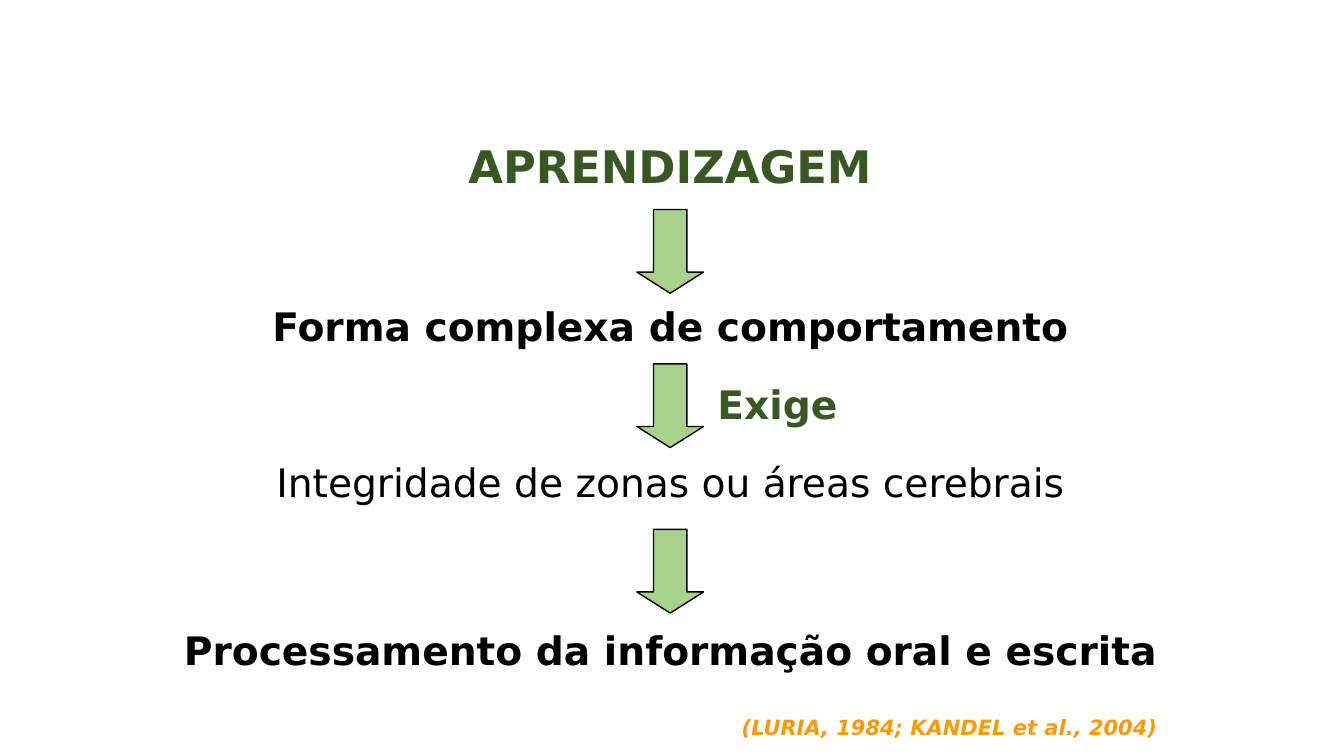
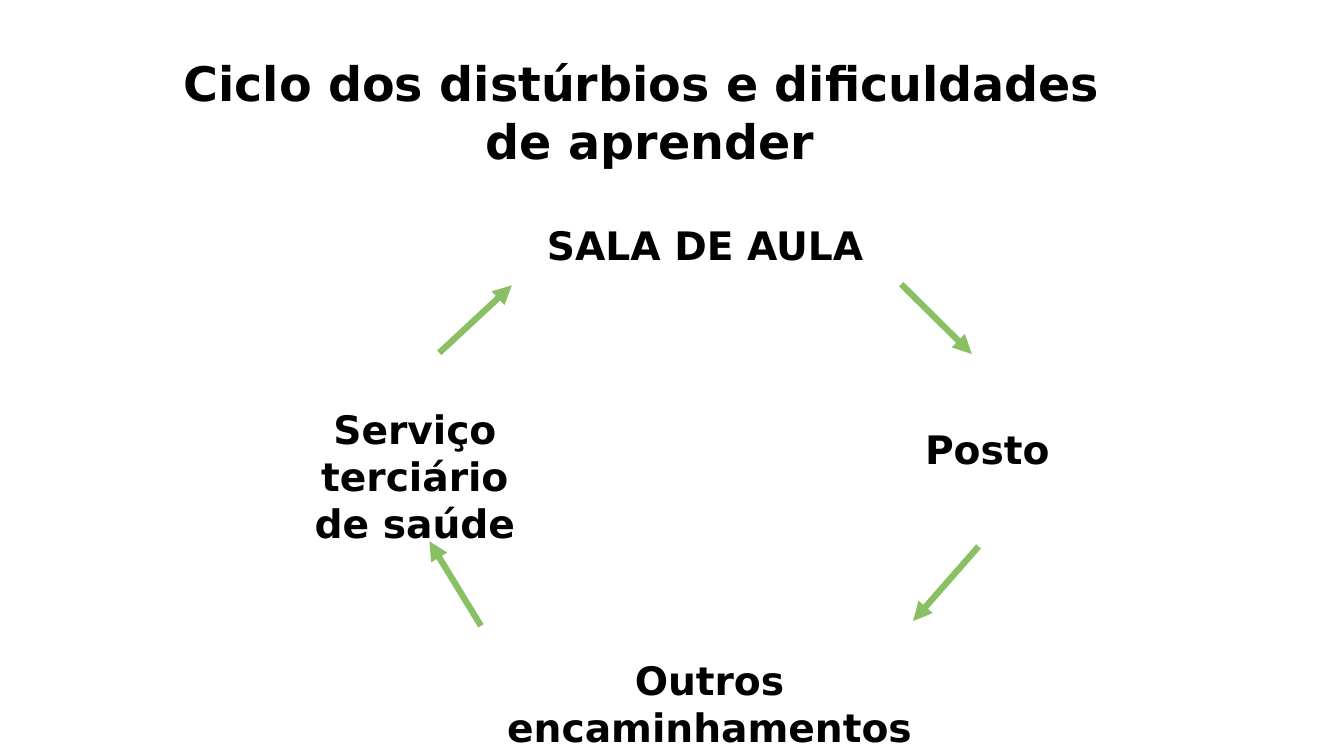
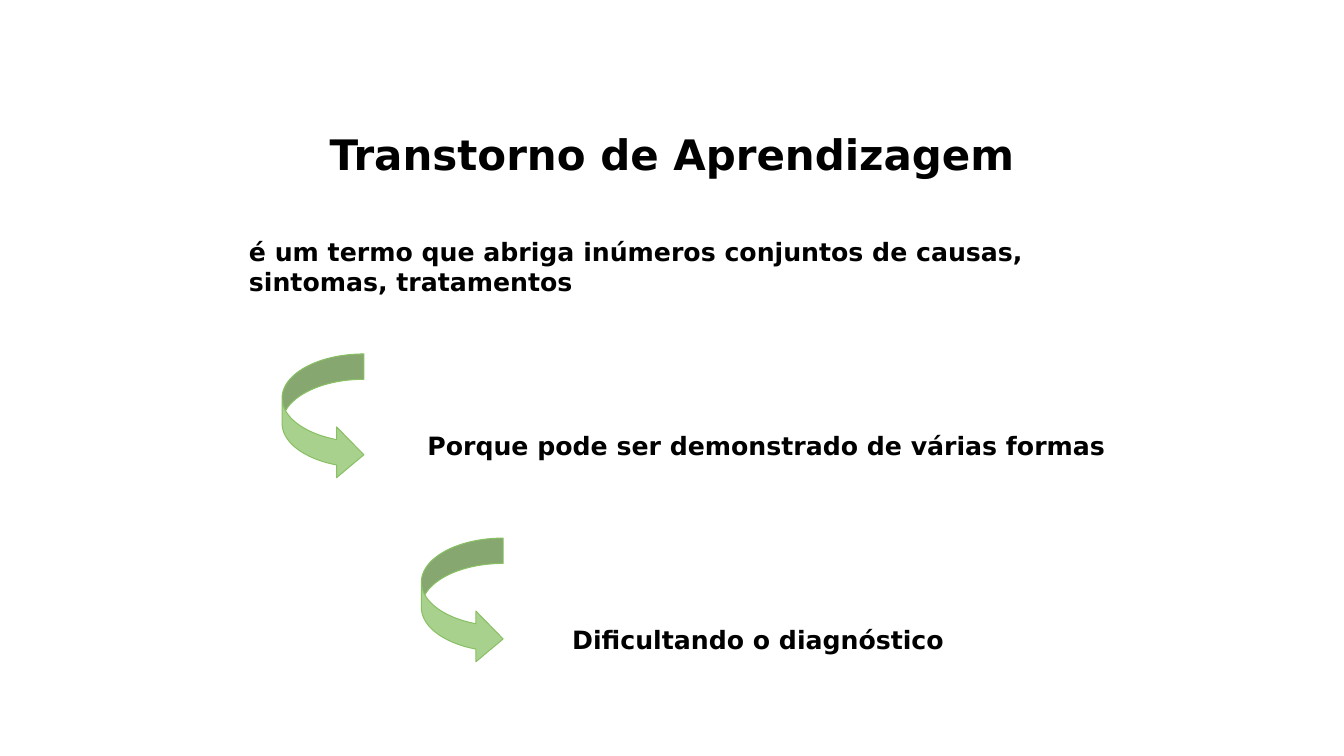
"""Build three slides on learning and learning disorders."""
from copy import deepcopy
from dataclasses import dataclass

from pptx import Presentation
from pptx.dml.color import RGBColor
from pptx.enum.shapes import MSO_CONNECTOR, MSO_SHAPE
from pptx.enum.text import MSO_ANCHOR, MSO_AUTO_SIZE, PP_ALIGN
from pptx.oxml.ns import qn
from pptx.oxml.xmlchemy import OxmlElement
from pptx.util import Cm, Pt


@dataclass(frozen=True)
class Theme:
    font: str = "DejaVu Sans"
    ink: str = "000000"
    dark_green: str = "385723"
    light_green: str = "A9D18E"
    mid_green: str = "89C064"
    orange: str = "FF9900"
    cycle_title: int = 34
    main_title: int = 32
    topic_title: int = 30
    label: int = 28
    body: int = 18
    citation: int = 15


T = Theme()
WIDTH, HEIGHT = 33.87, 19.05
TITLE_ONLY, TITLE_AND_BODY = 5, 1

AXIS = 16.89
STEP_W, STEP_H = 25.5, 1.45
STEPS = [
    ("Forma complexa de comportamento", 7.49, True),
    ("Integridade de zonas ou áreas cerebrais", 11.43, False),
    ("Processamento da informação oral e escrita", 15.65, True),
]
DOWN_W, DOWN_H = 1.68, 2.11
DOWN_TOPS = [5.28, 9.17, 13.34]

STAGES = [
    ("SALA DE AULA", (13.39, 5.46, 8.76, 1.45)),
    ("Posto", (22.99, 10.59, 3.78, 1.45)),
    ("Outros\vencaminhamentos", (10.49, 16.41, 14.78, 2.62)),
    ("Serviço\vterciário\vde saúde", (5.64, 10.08, 9.63, 3.8)),
]
CYCLE_ARROWS = [
    (22.71, 7.16, 24.49, 8.92),
    (24.66, 13.77, 23.01, 15.65),
    (12.12, 15.77, 10.82, 13.64),
    (11.07, 8.89, 12.9, 7.19),
]

DEFINITION = "é um termo que abriga inúmeros conjuntos de causas, sintomas, tratamentos"
CONSEQUENCES = [
    ("Porque pode ser demonstrado de várias formas", (10.52, 10.72, 19.08, 1.02), (7.11, 8.92)),
    ("Dificultando o diagnóstico", (14.17, 15.6, 13.18, 1.02), (10.62, 13.56)),
]
CURVE_W, CURVE_H = 2.06, 3.18


def write(sp, text, size=T.label, color=T.ink, bold=True, italic=False,
          align=PP_ALIGN.CENTER, anchor=MSO_ANCHOR.TOP):
    tf = sp.text_frame
    tf.text = text
    tf.word_wrap = True
    tf.auto_size = MSO_AUTO_SIZE.NONE
    tf.vertical_anchor = anchor
    p = tf.paragraphs[0]
    p.alignment = align
    p.space_before = Pt(0)
    for r in p.runs:
        r.font.name = T.font
        r.font.size = Pt(size)
        r.font.bold = bold
        r.font.italic = italic
        r.font.color.rgb = RGBColor.from_string(color)
    for br in p._p.findall(qn("a:br")):
        br.append(deepcopy(p.runs[0]._r.rPr))
    return p


def add_text(s, text, box, **fmt):
    return write(s.shapes.add_textbox(*map(Cm, box)), text, **fmt)


def move(sp, box):
    sp.left, sp.top, sp.width, sp.height = map(Cm, box)
    return sp


def add_slide(prs, layout, title, box, **fmt):
    s = prs.slides.add_slide(prs.slide_layouts[layout])
    write(move(s.shapes.title, box), title, anchor=MSO_ANCHOR.MIDDLE, **fmt)
    return s


def add_block_arrow(s, kind, box, adjustments, line, width):
    sp = s.shapes.add_shape(kind, *map(Cm, box))
    sp.shadow.inherit = False
    for i, value in enumerate(adjustments):
        sp.adjustments[i] = value
    sp.fill.solid()
    sp.fill.fore_color.rgb = RGBColor.from_string(T.light_green)
    sp.line.color.rgb = RGBColor.from_string(line)
    sp.line.width = Pt(width)


def add_arrow(s, ends):
    cxn = s.shapes.add_connector(MSO_CONNECTOR.STRAIGHT, *map(Cm, ends))
    cxn.line.color.rgb = RGBColor.from_string(T.mid_green)
    cxn.line.width = Pt(4.5)
    tail = OxmlElement("a:tailEnd")
    tail.set("type", "triangle")
    cxn.line._get_or_add_ln().append(tail)
    cxn._element.spPr.append(OxmlElement("a:effectLst"))


def build_learning(prs):
    s = add_slide(prs, TITLE_ONLY, "APRENDIZAGEM", (AXIS - 8.08, 3.38, 16.16, 1.6),
                  size=T.main_title, color=T.dark_green)
    for text, top, bold in STEPS:
        add_text(s, text, (AXIS - STEP_W / 2, top, STEP_W, STEP_H), bold=bold)
    for top in DOWN_TOPS:
        add_block_arrow(s, MSO_SHAPE.DOWN_ARROW, (AXIS - DOWN_W / 2, top, DOWN_W, DOWN_H),
                        (0.5, 0.317), T.ink, 1)
    add_text(s, "Exige", (17.83, 9.47, 4.22, STEP_H), color=T.dark_green, align=PP_ALIGN.LEFT)
    add_text(s, "(LURIA, 1984; KANDEL et al., 2004)", (18.24, 17.88, 11.18, 0.89),
             size=T.citation, color=T.orange, italic=True, align=PP_ALIGN.RIGHT)


def build_cycle(prs):
    s = add_slide(prs, TITLE_ONLY, "Ciclo dos distúrbios e dificuldades \vde aprender",
                  (3.63, 1.22, 25.5, 3.18), size=T.cycle_title)
    for text, box in STAGES:
        add_text(s, text, box)
    for ends in CYCLE_ARROWS:
        add_arrow(s, ends)


def build_disorder(prs):
    s = add_slide(prs, TITLE_AND_BODY, "Transtorno de Aprendizagem",
                  (5.51, 3.12, 22.86, 1.52), size=T.topic_title)
    body = move(s.placeholders[1], (6.02, 5.82, 22.86, 1.8))
    p = write(body, DEFINITION, size=T.body, align=PP_ALIGN.LEFT)
    pPr = p._p.get_or_add_pPr()
    pPr.set("marL", "0")
    pPr.set("indent", "0")
    pPr.append(OxmlElement("a:buNone"))
    for text, box, corner in CONSEQUENCES:
        add_text(s, text, box, size=T.body, align=PP_ALIGN.LEFT)
        add_block_arrow(s, MSO_SHAPE.CURVED_RIGHT_ARROW, (*corner, CURVE_W, CURVE_H),
                        (0.31, 0.62, 0.333), T.mid_green, 0.75)


def main():
    prs = Presentation()
    prs.slide_width, prs.slide_height = Cm(WIDTH), Cm(HEIGHT)
    for build in (build_learning, build_cycle, build_disorder):
        build(prs)
    prs.save("out.pptx")


if __name__ == "__main__":
    main()
